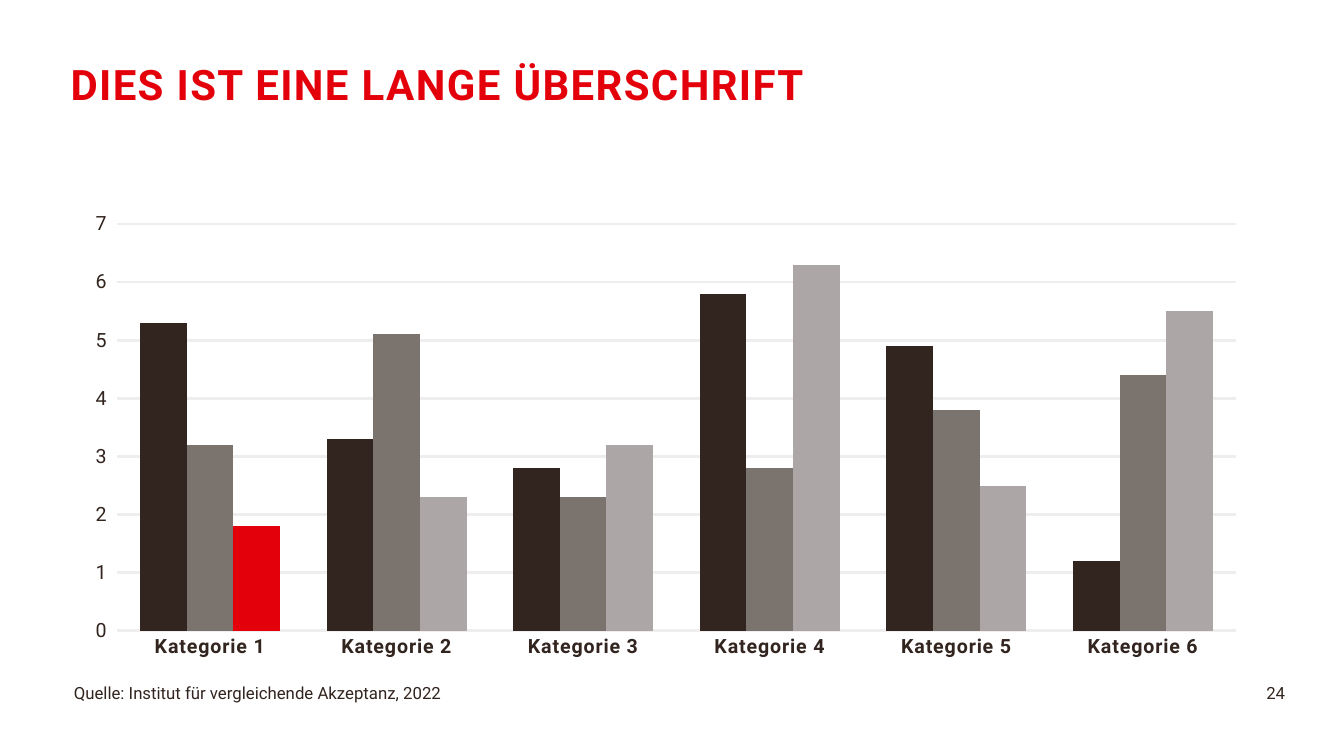
import pptx
import pptx.chart.data
import pptx.dml.color
import pptx.enum.chart
import pptx.enum.text
import pptx.oxml
import pptx.util

Pt = pptx.util.Pt
DARK, RED = "32241E", "E3000B"


def color(hex_string):
    return pptx.dml.color.RGBColor.from_string(hex_string)


def style(font, size, hex_string, bold=False):
    font.name = "Roboto"
    font.size = Pt(size)
    font.bold = bold
    font.color.rgb = color(hex_string)


presentation = pptx.Presentation()
presentation.slide_width, presentation.slide_height = Pt(960), Pt(540)
slide = presentation.slides.add_slide(presentation.slide_layouts[5])

# Heading
heading = slide.shapes.title
heading.left, heading.top, heading.width, heading.height = Pt(50.4), Pt(47.5), Pt(590), Pt(80.6)
heading_frame = heading.text_frame
heading_frame.text = "DIES IST EINE LANGE ÜBERSCHRIFT"
heading_frame.margin_left = heading_frame.margin_right = 0
heading_frame.margin_top = heading_frame.margin_bottom = 0
heading_frame.vertical_anchor = pptx.enum.text.MSO_ANCHOR.TOP
heading_frame.auto_size = pptx.enum.text.MSO_AUTO_SIZE.NONE
heading_line = heading_frame.paragraphs[0]
heading_line.alignment = pptx.enum.text.PP_ALIGN.LEFT
heading_line.line_spacing = 0.85
style(heading_line.font, 30, RED, bold=True)
heading_line.runs[0].font._element.set("spc", "100")

# Column chart
ratings = pptx.chart.data.CategoryChartData()
ratings.categories = [f"Kategorie {number}" for number in range(1, 7)]
ratings.add_series("Series 1", (5.3, 3.3, 2.8, 5.8, 4.9, 1.2))
ratings.add_series("Series 2", (3.2, 5.1, 2.3, 2.8, 3.8, 4.4))
ratings.add_series("Series 3", (1.8, 2.3, 3.2, 6.3, 2.5, 5.5))
chart = slide.shapes.add_chart(
    pptx.enum.chart.XL_CHART_TYPE.COLUMN_CLUSTERED,
    Pt(51.1), Pt(144.7), Pt(848.9), Pt(332.6), ratings).chart
chart.has_legend = False
chart.has_title = False
style(chart.font, 10, DARK)

columns = chart.plots[0]
columns.gap_width = 100
columns.overlap = 0
columns.vary_by_categories = False
for series, shade in zip(columns.series, (DARK, "7A736E", "ADA6A6")):
    series.invert_if_negative = False
    series.format.fill.solid()
    series.format.fill.fore_color.rgb = color(shade)
highlight = columns.series[2].points[0].format.fill
highlight.solid()
highlight.fore_color.rgb = color(RED)

# Axes and gridlines
categories, scale = chart.category_axis, chart.value_axis
for axis, bold in ((categories, True), (scale, False)):
    style(axis.tick_labels.font, 14, DARK, bold)
    axis.format.line.fill.background()
categories.major_tick_mark = pptx.enum.chart.XL_TICK_MARK.NONE
categories.tick_labels.font._element.set("spc", "50")
scale.major_tick_mark = pptx.enum.chart.XL_TICK_MARK.OUTSIDE
scale.minimum_scale, scale.maximum_scale, scale.major_unit = 0, 7, 1
gridline = scale.major_gridlines.format.line
gridline.width = Pt(2)
gridline.color.rgb = color("EFEDED")

# Fixed plot area
plot_area = chart._chartSpace.chart.plotArea
for old_layout in plot_area.xpath("c:layout"):
    plot_area.remove(old_layout)
plot_area.insert(0, pptx.oxml.parse_xml(
    '<c:layout xmlns:c="http://schemas.openxmlformats.org/drawingml/2006/chart">'
    '<c:manualLayout><c:layoutTarget val="inner"/>'
    '<c:xMode val="edge"/><c:yMode val="edge"/><c:x val="0.038"/><c:y val="0.046"/>'
    '<c:w val="0.942"/><c:h val="0.874"/></c:manualLayout></c:layout>'))

# Source note and page number
for note, left, width, inset, alignment in (
        ("Quelle: Institut für vergleichende Akzeptanz, 2022", 49.7, 591, 3,
         pptx.enum.text.PP_ALIGN.LEFT),
        ("24", 763.2, 154.8, 0, pptx.enum.text.PP_ALIGN.RIGHT)):
    footer = slide.shapes.add_textbox(Pt(left), Pt(487.4), Pt(width), Pt(28.8)).text_frame
    footer.word_wrap = True
    footer.margin_left = Pt(inset)
    footer.margin_top = footer.margin_right = footer.margin_bottom = 0
    footer.text = note
    footer.paragraphs[0].alignment = alignment
    style(footer.paragraphs[0].font, 12, DARK)

presentation.save("out.pptx")
